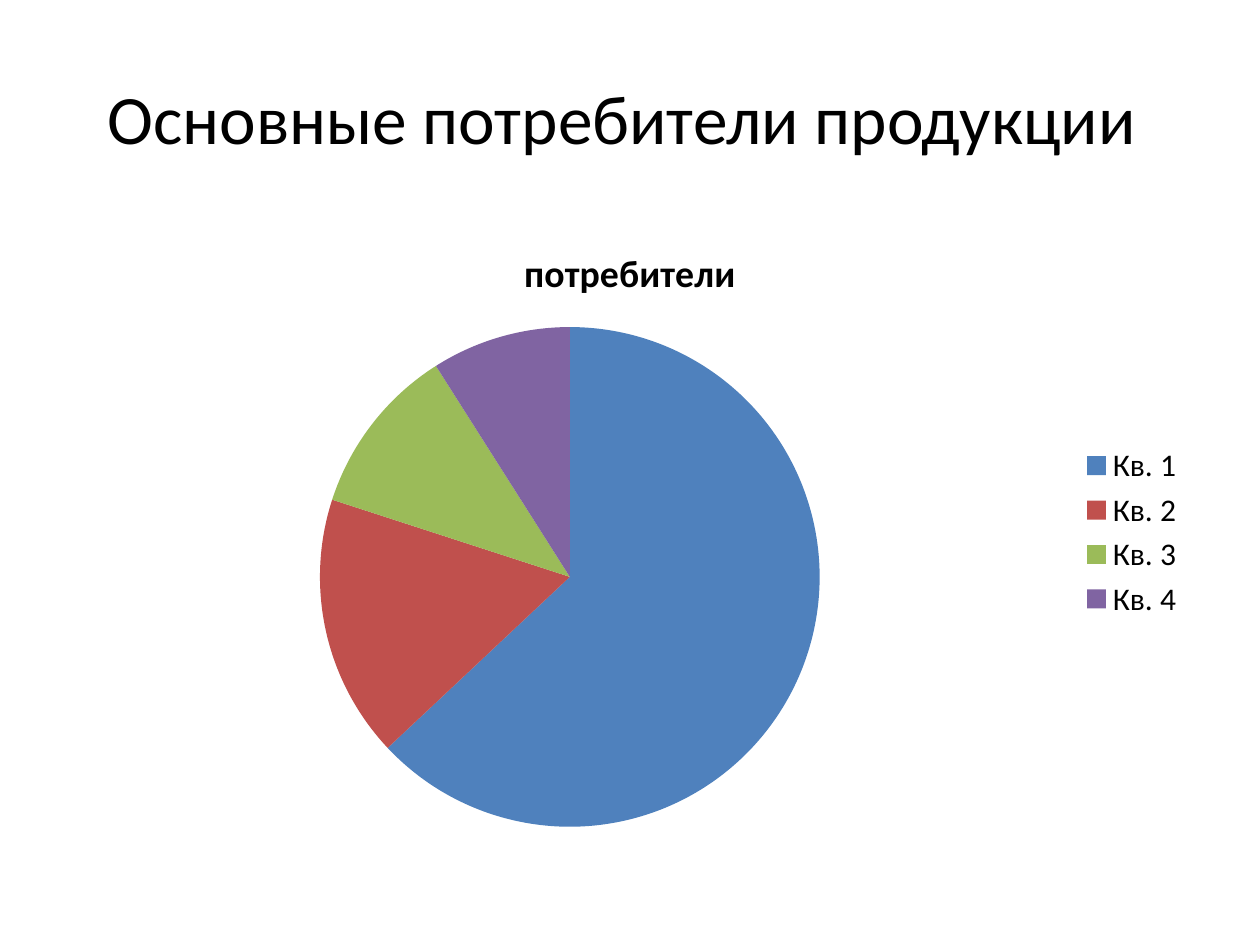
from dataclasses import dataclass

from pptx import Presentation
from pptx import util as u
from pptx.chart import data
from pptx.dml.color import RGBColor
from pptx.enum import chart as charts, text

PX = 9144
FONT = "Calibri"
BLACK = RGBColor(0x00, 0x00, 0x00)
BLUE = RGBColor(0x4F, 0x81, 0xBD)
RED = RGBColor(0xC0, 0x50, 0x4D)
GREEN = RGBColor(0x9B, 0xBB, 0x59)
PURPLE = RGBColor(0x80, 0x64, 0xA2)


@dataclass(frozen=True)
class Frame:
    left: int
    top: int
    width: int
    height: int

    def emu(self) -> tuple[int, ...]:
        return tuple(n * PX for n in (self.left, self.top, self.width, self.height))


@dataclass(frozen=True)
class Quarter:
    label: str
    share: int
    color: RGBColor


QUARTERS = [
    Quarter("Кв. 1", 63, BLUE),
    Quarter("Кв. 2", 17, RED),
    Quarter("Кв. 3", 11, GREEN),
    Quarter("Кв. 4", 9, PURPLE),
]


def set_font(font, size: float, bold: bool = False) -> None:
    font.name = FONT
    font.size = u.Pt(size)
    font.bold = bold
    font.color.rgb = BLACK


def add_title(page, frame: Frame, words: str) -> None:
    box = page.shapes.add_textbox(*frame.emu()).text_frame
    box.word_wrap = True
    box.vertical_anchor = text.MSO_ANCHOR.MIDDLE
    para = box.paragraphs[0]
    para.text = words
    para.alignment = text.PP_ALIGN.CENTER
    set_font(para.font, 39.6)


def add_pie(page, frame: Frame, name: str, quarters: list[Quarter]) -> None:
    shares = data.CategoryChartData()
    shares.categories = [quarter.label for quarter in quarters]
    shares.add_series(name, [quarter.share for quarter in quarters])
    pie = page.shapes.add_chart(charts.XL_CHART_TYPE.PIE, *frame.emu(), shares).chart
    set_font(pie.font, 18)

    pie.has_title = True
    para = pie.chart_title.text_frame.paragraphs[0]
    para.text = name
    set_font(para.font, 21.6, bold=True)
    pie.chart_title.include_in_layout = False

    pie.has_legend = True
    pie.legend.position = charts.XL_LEGEND_POSITION.RIGHT
    pie.legend.include_in_layout = False
    set_font(pie.legend.font, 18)

    plot = pie.plots[0]
    plot.vary_by_categories = True
    for index, quarter in enumerate(quarters):
        fill = plot.series[0].points[index].format.fill
        fill.solid()
        fill.fore_color.rgb = quarter.color


def main() -> None:
    deck = Presentation()
    deck.slide_width, deck.slide_height = 1000 * PX, 750 * PX
    page = deck.slides.add_slide(deck.slide_layouts[6])
    add_title(page, Frame(50, 30, 900, 125), "Основные потребители продукции ")
    add_pie(page, Frame(50, 175, 900, 495), "потребители", QUARTERS)
    deck.save("out.pptx")


if __name__ == "__main__":
    main()
